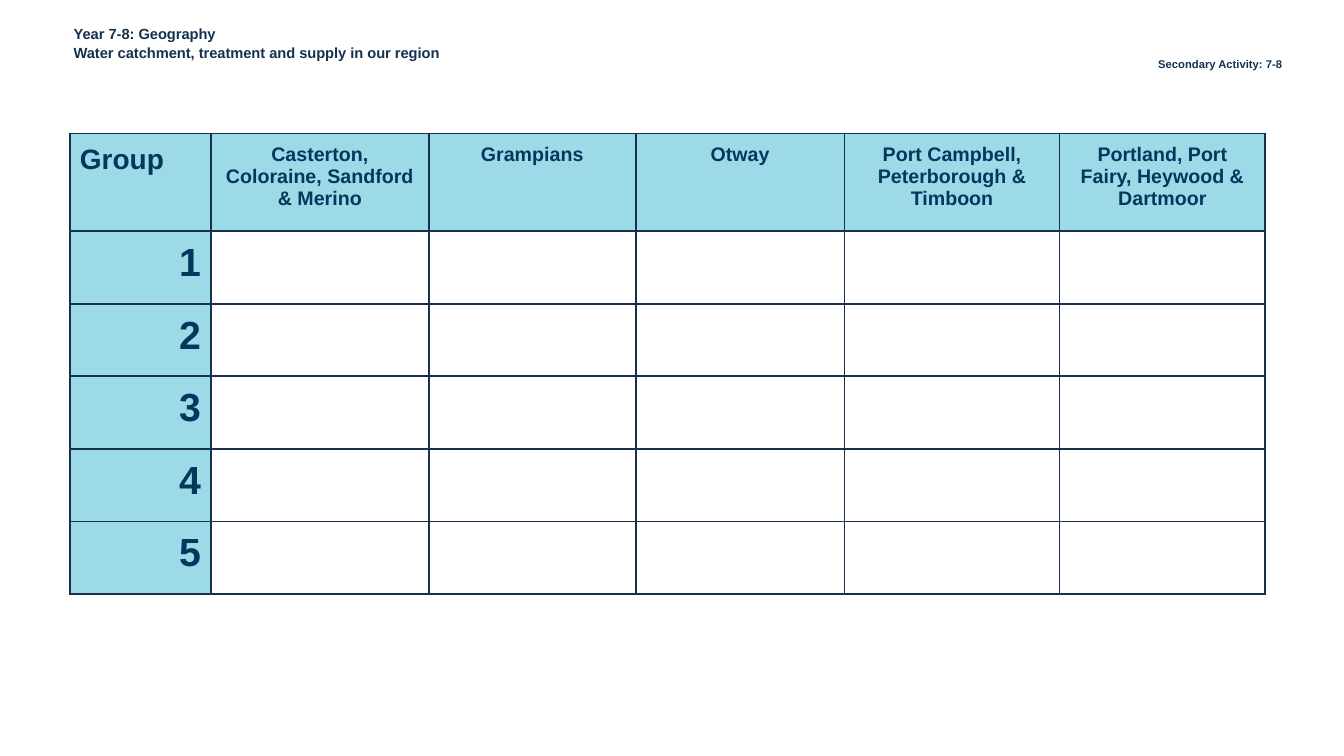
"""Builds the water catchment group activity slide."""
import pptx
import pptx.dml.color
import pptx.enum.text
import pptx.oxml.ns
import pptx.util
from lxml import etree

Pt = pptx.util.Pt
ALIGN = pptx.enum.text.PP_ALIGN
INK, NAVY, AQUA, BORDER = "14314E", "00395D", "9DDAE7", "17314F"
PLACES = [
    "Casterton, Coloraine, Sandford & Merino",
    "Grampians",
    "Otway",
    "Port Campbell, Peterborough & Timboon",
    "Portland, Port Fairy, Heywood & Dartmoor",
]
GROUPS = 5
COL_WIDTHS = [100.8, 155.6, 147.8, 149.2, 153.6, 147]
HEADER_HEIGHT, ROW_HEIGHT = 69.8, 51.84


def rgb(value):
    """Return the colour for a hex string."""
    return pptx.dml.color.RGBColor.from_string(value)


def add_run(p, text, size, color, align):
    """Add a bold Arial run to an aligned paragraph."""
    p.alignment = align
    r = p.add_run()
    r.text = text
    r.font.name = "Arial"
    r.font.size = Pt(size)
    r.font.bold = True
    r.font.color.rgb = rgb(color)


def set_box(sp, left, top, width, height, margin):
    """Place a text shape and return its top-anchored text frame."""
    sp.left, sp.top, sp.width, sp.height = map(Pt, (left, top, width, height))
    tf = sp.text_frame
    tf.word_wrap = True
    tf.auto_size = pptx.enum.text.MSO_AUTO_SIZE.NONE
    tf.vertical_anchor = pptx.enum.text.MSO_ANCHOR.TOP
    tf.margin_left = tf.margin_right = Pt(7.2)
    tf.margin_top = tf.margin_bottom = Pt(margin)
    return tf


def add_title(s):
    """Fill the title placeholder with the subject and topic lines."""
    tf = set_box(s.shapes.title, 45.4, 10.8, 483.8, 52.6, 7.2)
    add_run(tf.paragraphs[0], "Year 7-8: Geography", 10.5, INK, ALIGN.LEFT)
    p = tf.add_paragraph()
    p.space_before = Pt(0.8)
    add_run(p, "Water catchment, treatment and supply in our region", 10.5, INK, ALIGN.LEFT)


def add_label(s):
    """Add the activity label at the top right."""
    sp = s.shapes.add_textbox(0, 0, 0, 0)
    tf = set_box(sp, 756.7, 37.4, 166.3, 17.3, 3.6)
    add_run(tf.paragraphs[0], "Secondary Activity: 7-8", 8, INK, ALIGN.RIGHT)


def set_borders(cell):
    """Draw a solid line on each side of a cell."""
    tc_pr = cell._tc.get_or_add_tcPr()
    for side in ("a:lnL", "a:lnR", "a:lnT", "a:lnB"):
        ln = etree.SubElement(tc_pr, pptx.oxml.ns.qn(side), w=str(Pt(1.5)))
        fill = etree.SubElement(ln, pptx.oxml.ns.qn("a:solidFill"))
        etree.SubElement(fill, pptx.oxml.ns.qn("a:srgbClr"), val=BORDER)


def format_cell(cell, filled):
    """Set the margins, borders and fill of a cell."""
    cell.margin_left = cell.margin_right = Pt(7.2)
    cell.margin_top = cell.margin_bottom = Pt(7.2)
    set_borders(cell)
    if filled:
        cell.fill.solid()
        cell.fill.fore_color.rgb = rgb(AQUA)
    else:
        cell.fill.background()


def add_group_table(s):
    """Add the table of groups against places."""
    heights = [HEADER_HEIGHT] + [ROW_HEIGHT] * GROUPS
    frame = s.shapes.add_table(len(heights), len(COL_WIDTHS), Pt(49.9), Pt(95.4),
                               Pt(sum(COL_WIDTHS)), Pt(sum(heights)))
    table = frame.table
    table.first_row = table.horz_banding = False
    for column, width in zip(table.columns, COL_WIDTHS):
        column.width = Pt(width)
    for i, height in enumerate(heights):
        table.rows[i].height = Pt(height)
        for j in range(len(COL_WIDTHS)):
            format_cell(table.cell(i, j), i == 0 or j == 0)

    def write(row, col, text, size, align):
        """Write text into one table cell."""
        add_run(table.cell(row, col).text_frame.paragraphs[0], text, size, NAVY, align)

    write(0, 0, "Group", 20, ALIGN.LEFT)
    for j, place in enumerate(PLACES, 1):
        write(0, j, place, 14, ALIGN.CENTER)
    for i in range(1, GROUPS + 1):
        write(i, 0, str(i), 28, ALIGN.RIGHT)


def main():
    """Build and save the slide."""
    prs = pptx.Presentation()
    prs.slide_width, prs.slide_height = Pt(960), Pt(540)
    s = prs.slides.add_slide(prs.slide_layouts[5])
    add_label(s)
    add_title(s)
    add_group_table(s)
    prs.save("out.pptx")


if __name__ == "__main__":
    main()
